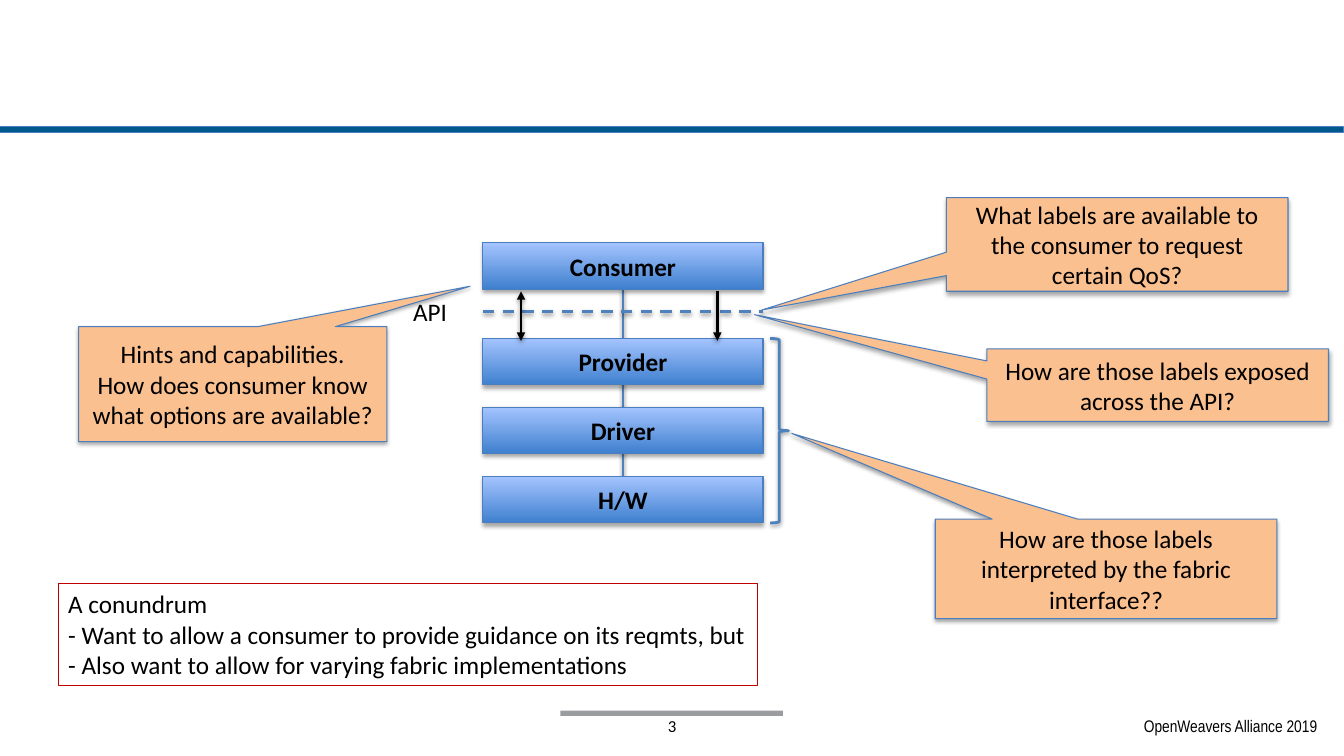
from lxml.etree import SubElement
from pptx import Presentation
from pptx.dml.color import RGBColor
from pptx.enum.dml import MSO_LINE
from pptx.enum.shapes import MSO_CONNECTOR, MSO_SHAPE
from pptx.enum.text import MSO_ANCHOR, PP_ALIGN
from pptx.oxml.ns import qn
from pptx.util import Cm, Pt

BLACK = "000000"
EDGE = "4B7EBC"
STEEL = "4F81BD"
LAYER_LEFT, LAYER_WIDTH, LAYER_HEIGHT = 12.17, 7.06, 1.17
LAYERS = [("Consumer", 6.12), ("Provider", 8.53), ("Driver", 10.26), ("H/W", 12.01)]
CALLOUTS = [
    ("How are those labels exposed across the API?",
     (24.87, 8.79, 8.61, 1.83), (-1.18, -0.97)),
    ("How are those labels interpreted by the fabric interface??",
     (23.57, 13.08, 8.61, 2.51), (-0.92, -1.36)),
    ("Hints and capabilities.\nHow does consumer know what options are available?",
     (1.98, 8.23, 7.77, 2.9), (0.77, -0.85)),
    ("What labels are available to the consumer to request certain QoS?",
     (23.85, 4.98, 8.61, 2.36), (-1.04, 0.7)),
]
CONUNDRUM = """A conundrum
- Want to allow a consumer to provide guidance on its reqmts, but
- Also want to allow for varying fabric implementations"""


def rgb(color):
    return RGBColor.from_string(color)


def set_shadow(element, opacity, distance):
    """Cast a soft shadow straight down; opacity is in percent."""
    effects = element.spPr.find(qn("a:effectLst"))
    if effects is None:
        effects = SubElement(element.spPr, qn("a:effectLst"))
    outer = SubElement(effects, qn("a:outerShdw"), blurRad=str(Pt(3.1)),
                       dist=str(Pt(distance)), dir="5400000", rotWithShape="0")
    black = SubElement(outer, qn("a:srgbClr"), val=BLACK)
    SubElement(black, qn("a:alpha"), val=str(opacity * 1000))


def write(shape, text, size=18, font="Calibri", bold=False, align=PP_ALIGN.CENTER,
          anchor=MSO_ANCHOR.MIDDLE, wrap=True):
    frame = shape.text_frame
    frame.text = text
    frame.word_wrap = wrap
    frame.vertical_anchor = anchor
    for paragraph in frame.paragraphs:
        paragraph.alignment = align
        paragraph.font.size = Pt(size)
        paragraph.font.name = font
        paragraph.font.bold = bold
        paragraph.font.color.rgb = rgb(BLACK)


def add_label(slide, box, text, **text_format):
    write(slide.shapes.add_textbox(*map(Cm, box)), text, **text_format)


def add_figure(slide, kind, box, fill=None, line=None, width=0.75):
    figure = slide.shapes.add_shape(kind, *map(Cm, box))
    figure.shadow.inherit = False
    if fill:
        figure.fill.solid()
        figure.fill.fore_color.rgb = rgb(fill)
    else:
        figure.fill.background()
    if line:
        figure.line.color.rgb = rgb(line)
        figure.line.width = Pt(width)
    else:
        figure.line.fill.background()
    return figure


def add_layer(slide, name, top):
    layer = add_figure(slide, MSO_SHAPE.RECTANGLE,
                       (LAYER_LEFT, top, LAYER_WIDTH, LAYER_HEIGHT), line=EDGE)
    layer.fill.gradient()
    layer.fill.gradient_angle = 90
    for stop, color in zip(layer.fill.gradient_stops, ("3F80CE", "A4C4FF")):
        stop.color.rgb = rgb(color)
    set_shadow(layer._element, 35, 1.8)
    write(layer, name, bold=True)


def add_callout(slide, question, box, tip):
    callout = add_figure(slide, MSO_SHAPE.RECTANGULAR_CALLOUT, box, "FAC090", EDGE)
    callout.adjustments[0], callout.adjustments[1] = tip
    set_shadow(callout._element, 35, 1.8)
    write(callout, question)


def add_line(slide, start, end, color=STEEL, dash=None, arrows=()):
    """Draw a line; arrows names the ends that get a head: headEnd, tailEnd."""
    connector = slide.shapes.add_connector(
        MSO_CONNECTOR.STRAIGHT, *map(Cm, start + end))
    connector.line.color.rgb = rgb(color)
    connector.line.width = Pt(2)
    if dash:
        connector.line.dash_style = dash
    for arrow in arrows:
        SubElement(connector.line._get_or_add_ln(), qn(f"a:{arrow}"), type="triangle")
    set_shadow(connector._element, 38, 1.6)


def add_master_parts(slide):
    add_figure(slide, MSO_SHAPE.RECTANGLE, (0, 3.2, 33.87, 0.13), "00588D", EDGE)
    add_figure(slide, MSO_SHAPE.RECTANGLE, (14.12, 17.91, 5.61, 0.13), "9A9C9F")
    add_label(slide, (13.13, 17.78, 7.62, 1.02), "3", size=12)
    add_label(slide, (22.02, 17.78, 11.43, 1.02), "OpenWeavers Alliance 2019",
              size=12, font="Arial Narrow", align=PP_ALIGN.RIGHT)


def add_stack(slide):
    add_line(slide, (15.7, 7.29), (15.7, 12.32), arrows=["tailEnd"])
    for name, top in LAYERS:
        add_layer(slide, name, top)
    add_line(slide, (LAYER_LEFT, 7.85), (LAYER_LEFT + LAYER_WIDTH, 7.85),
             dash=MSO_LINE.DASH)
    add_label(slide, (10.16, 7.34, 1.37, 1.02), "API", align=PP_ALIGN.LEFT,
              anchor=MSO_ANCHOR.TOP, wrap=False)
    brace = add_figure(slide, MSO_SHAPE.RIGHT_BRACE, (19.41, 8.53, 0.46, 4.65),
                       line=STEEL, width=2)
    set_shadow(brace._element, 38, 1.6)


def main():
    deck = Presentation()
    deck.slide_width, deck.slide_height = Cm(33.87), Cm(19.05)
    slide = deck.slides.add_slide(deck.slide_layouts[6])
    add_master_parts(slide)
    add_stack(slide)
    for question, box, tip in CALLOUTS:
        add_callout(slide, question, box, tip)
    for x, arrows in ((18.08, ["tailEnd"]), (13.13, ["headEnd", "tailEnd"])):
        add_line(slide, (x, 7.34), (x, 8.59), BLACK, arrows=arrows)
    conundrum = add_figure(slide, MSO_SHAPE.RECTANGLE, (1.47, 14.71, 17.63, 2.57),
                           line="C00000")
    write(conundrum, CONUNDRUM, align=PP_ALIGN.LEFT, anchor=MSO_ANCHOR.TOP, wrap=False)
    deck.save("out.pptx")


if __name__ == "__main__":
    main()
